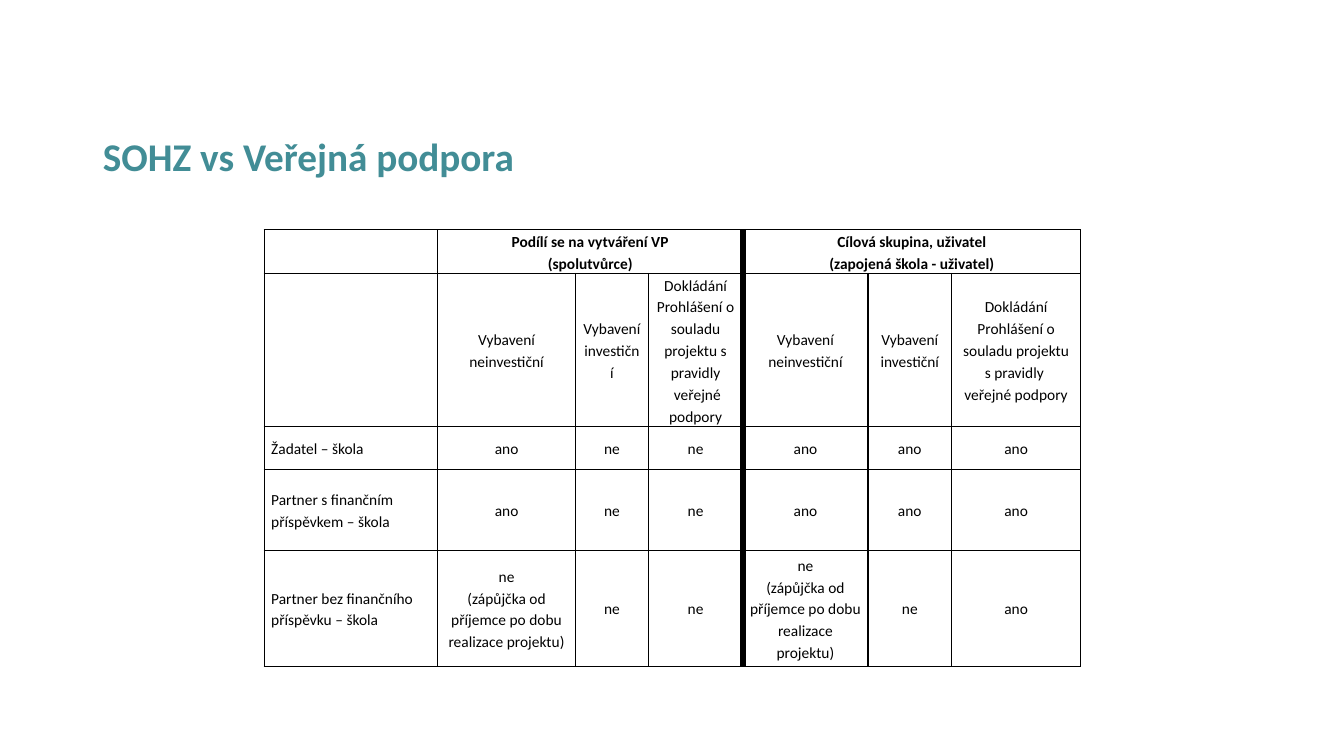
from lxml import etree
from pptx import Presentation
from pptx.dml.color import RGBColor
from pptx.enum import text
from pptx.oxml import ns
from pptx.util import Inches, Pt

TEAL = RGBColor(0x42, 0x8D, 0x96)
BLACK = RGBColor(0, 0, 0)
FONT = "Calibri"

COLUMN_WIDTHS = [1.72, 1.37, 0.72, 0.94, 1.24, 0.83, 1.28]
ROW_HEIGHTS = [0.41, 1.34, 0.43, 0.8, 1.15]
GROUP_COLUMNS = [1, 4]
DIVIDER_COLUMN = 4
EQUIPMENT = ["Vybavení neinvestiční", "Vybavení investiční"]
LOAN = "ne\n(zápůjčka od příjemce po dobu realizace projektu)"
ROWS = [
    ["", "Podílí se na vytváření VP\n(spolutvůrce)", "", "",
     "Cílová skupina, uživatel\n(zapojená škola - uživatel)", "", ""],
    ["", *EQUIPMENT, "Dokládání Prohlášení o souladu projektu s pravidly\n veřejné podpory",
     *EQUIPMENT, "Dokládání Prohlášení o souladu projektu s pravidly \nveřejné podpory"],
    ["Žadatel – škola", "ano", "ne", "ne", "ano", "ano", "ano"],
    ["Partner s finančním příspěvkem – škola", "ano", "ne", "ne", "ano", "ano", "ano"],
    ["Partner bez finančního příspěvku – škola", LOAN, "ne", "ne", LOAN, "ne", "ano"],
]


def apply_format(target, values):
    """Set each named attribute of the target."""
    for name, value in values.items():
        setattr(target, name, value)


def format_font(font, size, color, bold):
    """Give a font its face, size, weight and colour."""
    apply_format(font, {"name": FONT, "size": Pt(size), "bold": bold})
    font.color.rgb = color


def set_borders(cell, widths):
    """Draw the cell borders, given a width in points for each side."""
    properties = cell._tc.get_or_add_tcPr()
    for index, (side, width) in enumerate(widths.items()):
        line = etree.Element(ns.qn(f"a:ln{side}"), w=str(Pt(width)))
        fill = etree.SubElement(line, ns.qn("a:solidFill"))
        etree.SubElement(fill, ns.qn("a:srgbClr"), val=str(BLACK))
        properties.insert(index, line)


def add_title(page, left, top, width, height):
    """Place the slide title in the given box."""
    title = page.shapes.title
    apply_format(title, {"left": left, "top": top, "width": width, "height": height})
    title.text_frame.text = "SOHZ vs Veřejná podpora"
    title.text_frame.vertical_anchor = text.MSO_ANCHOR.MIDDLE
    para = title.text_frame.paragraphs[0]
    apply_format(para, {"alignment": text.PP_ALIGN.JUSTIFY, "line_spacing": 0.9})
    format_font(para.runs[0].font, 28, TEAL, True)


def fill_cell(cell, content, row, column):
    """Write and format one table cell."""
    cell.fill.background()
    apply_format(cell, {
        "margin_left": Inches(0.07), "margin_right": Inches(0.07),
        "margin_top": 0, "margin_bottom": 0,
        "vertical_anchor": text.MSO_ANCHOR.MIDDLE,
    })
    last_column = column + cell.span_width if cell.is_merge_origin else column + 1
    set_borders(cell, {
        "L": 4.5 if column == DIVIDER_COLUMN else 1,
        "R": 4.5 if last_column == DIVIDER_COLUMN else 1,
        "T": 1, "B": 1,
    })
    if not content:
        return
    cell.text_frame.text = content
    alignment = text.PP_ALIGN.CENTER if column else text.PP_ALIGN.LEFT
    for para in cell.text_frame.paragraphs:
        apply_format(para, {"alignment": alignment, "line_spacing": 1.15})
        for span in para.runs:
            format_font(span.font, 11, BLACK, row == 0)


def add_support_table(page, left, top, width, height):
    """Place the table of support rules in the given box."""
    frame = page.shapes.add_table(len(ROWS), len(COLUMN_WIDTHS), left, top, width, height)
    table = frame.table
    apply_format(table, {"first_row": False, "horz_banding": False})
    for column, size in zip(table.columns, COLUMN_WIDTHS):
        column.width = Inches(size)
    for row, size in zip(table.rows, ROW_HEIGHTS):
        row.height = Inches(size)
    for start in GROUP_COLUMNS:
        table.cell(0, start).merge(table.cell(0, start + 2))
    for row, contents in enumerate(ROWS):
        for column, content in enumerate(contents):
            fill_cell(table.cell(row, column), content, row, column)


def main():
    """Build and save the deck."""
    deck = Presentation()
    apply_format(deck, {"slide_width": Inches(13.33), "slide_height": Inches(7.5)})
    page = deck.slides.add_slide(deck.slide_layouts[5])
    add_title(page, Inches(0.92), Inches(1.03), Inches(11.5), Inches(1.1))
    add_support_table(page, Inches(2.62), Inches(2.28), Inches(8.1), Inches(4.28))
    deck.save("out.pptx")


if __name__ == "__main__":
    main()
